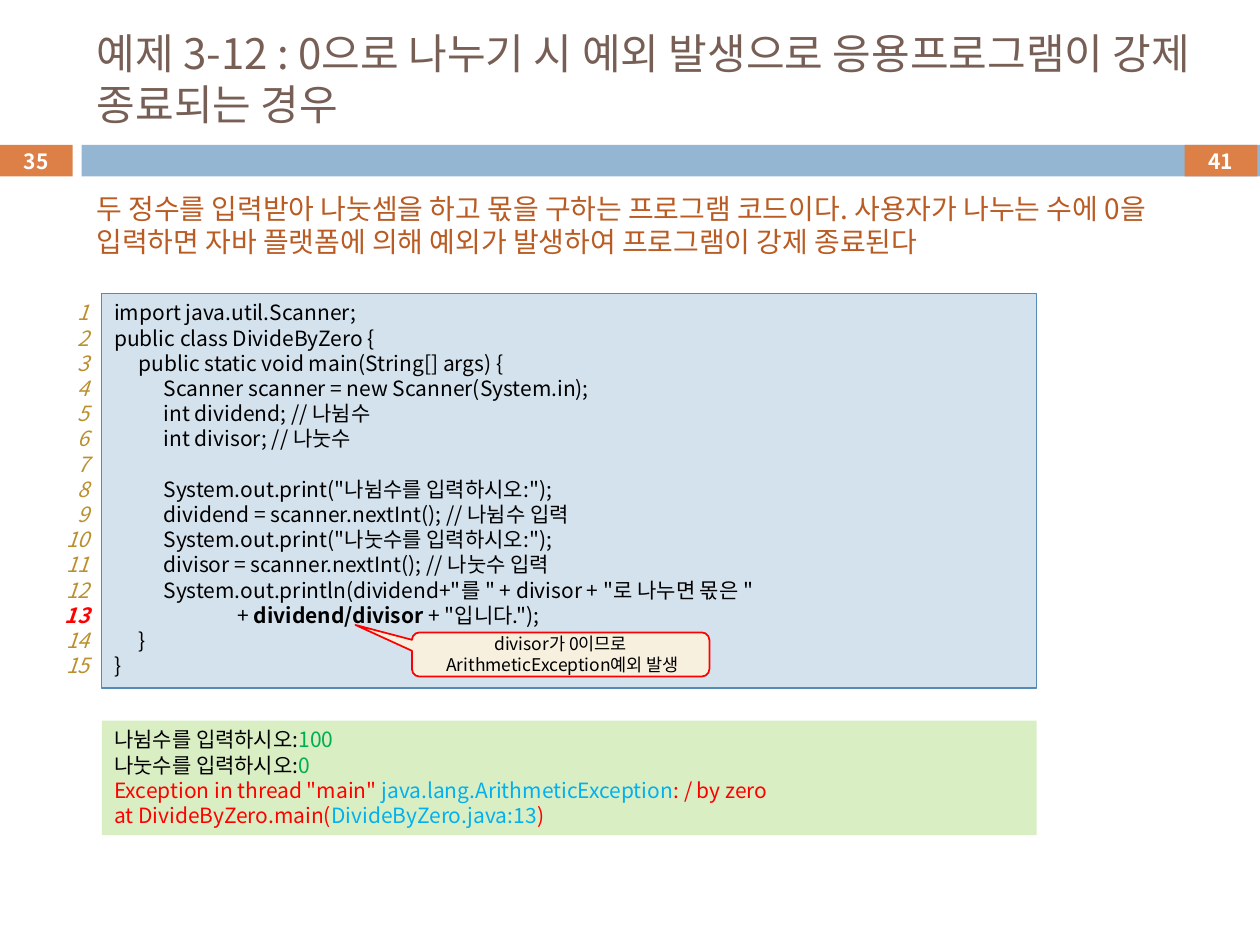
from dataclasses import dataclass, field
from lxml.etree import SubElement
from pptx import Presentation
from pptx.dml.color import RGBColor
from pptx.enum.shapes import MSO_SHAPE
from pptx.enum.text import MSO_ANCHOR, MSO_AUTO_SIZE, PP_ALIGN
from pptx.oxml.ns import qn
from pptx.util import Pt


@dataclass(frozen=True)
class Theme:
    font: str = "Noto Sans CJK KR"
    lead: float = 1.2
    tab: float = 14.1
    head: float = 24
    intro: float = 16
    code: float = 12
    note: float = 10
    brown: str = "775F55"
    rust: str = "B95B22"
    orange: str = "DD8047"
    blue: str = "94B6D2"
    pale: str = "D4E2ED"
    edge: str = "558BB8"
    mint: str = "DAEEC4"
    cream: str = "F7F0DE"
    gold: str = "BA8F2D"
    red: str = "FF0000"
    green: str = "00B050"
    sky: str = "00B0F0"
    black: str = "000000"
    white: str = "FFFFFF"


T = Theme()


@dataclass(frozen=True)
class Run:
    text: str
    color: str = T.black
    bold: bool = False
    italic: bool = False


@dataclass(frozen=True)
class Style:
    size: float = T.code
    align: PP_ALIGN = PP_ALIGN.LEFT
    anchor: MSO_ANCHOR = MSO_ANCHOR.TOP
    tabs: int = 0


@dataclass(frozen=True)
class Box:
    left: float
    top: float
    width: float
    height: float
    fill: str | None = None
    line: str | None = None
    weight: float = 0.75
    kind: MSO_SHAPE = MSO_SHAPE.RECTANGLE
    bends: tuple[float, ...] = ()
    rows: list[list[Run]] = field(default_factory=list)
    style: Style = Style()


def apply(target, values: dict) -> None:
    for name, value in values.items():
        setattr(target, name, value)


def add_tabs(para, count: int) -> None:
    stops = SubElement(para._p.get_or_add_pPr(), qn("a:tabLst"))
    for step in range(1, count + 1):
        SubElement(stops, qn("a:tab"), pos=str(Pt(T.tab * step)), algn="l")


def write(frame, rows: list[list[Run]], style: Style) -> None:
    apply(frame, {"word_wrap": True, "auto_size": MSO_AUTO_SIZE.NONE,
                  "vertical_anchor": style.anchor,
                  "margin_left": Pt(7.2), "margin_right": Pt(7.2),
                  "margin_top": Pt(3.6), "margin_bottom": Pt(3.6)})
    pitch = Pt(style.size * T.lead)
    gap = 0
    first = True
    for row in rows:
        if not row:
            gap += pitch
            continue
        para = frame.paragraphs[0] if first else frame.add_paragraph()
        first = False
        apply(para, {"alignment": style.align, "line_spacing": pitch,
                     "space_before": gap, "space_after": Pt(0)})
        gap = 0
        if style.tabs:
            add_tabs(para, style.tabs)
        for part in row:
            run = para.add_run()
            run.text = part.text
            apply(run.font, {"name": T.font, "size": Pt(style.size),
                             "bold": part.bold, "italic": part.italic})
            run.font.color.rgb = RGBColor.from_string(part.color)
            SubElement(run._r.get_or_add_rPr(), qn("a:ea"), typeface=T.font)


def draw(slide, box: Box) -> None:
    area = [Pt(n) for n in (box.left, box.top, box.width, box.height)]
    if box.fill:
        shape = slide.shapes.add_shape(box.kind, *area)
        shape.shadow.inherit = False
        shape.fill.solid()
        shape.fill.fore_color.rgb = RGBColor.from_string(box.fill)
        if box.line:
            shape.line.color.rgb = RGBColor.from_string(box.line)
            shape.line.width = Pt(box.weight)
        else:
            shape.line.fill.background()
        for spot, bend in enumerate(box.bends):
            shape.adjustments[spot] = bend
    else:
        shape = slide.shapes.add_textbox(*area)
    if box.rows:
        write(shape.text_frame, box.rows, box.style)


CODE = """import java.util.Scanner;
public class DivideByZero {
\tpublic static void main(String[] args) {
\t\tScanner scanner = new Scanner(System.in);
\t\tint dividend; // 나뉨수
\t\tint divisor; // 나눗수

\t\tSystem.out.print("나뉨수를 입력하시오:");
\t\tdividend = scanner.nextInt(); // 나뉨수 입력
\t\tSystem.out.print("나눗수를 입력하시오:");
\t\tdivisor = scanner.nextInt(); // 나눗수 입력
\t\tSystem.out.println(dividend+"를 " + divisor + "로 나누면 몫은 "
\t\t\t\t\t+ dividend/divisor + "입니다.");
\t}
}""".split("\n")
FAULT = 13
KEY = "dividend/divisor"


def split_code(line: str) -> list[Run]:
    start, key, rest = line.partition(KEY)
    parts = [Run(start), Run(key, bold=True), Run(rest)]
    return [part for part in parts if part.text]


def count_row(num: int) -> list[Run]:
    bad = num == FAULT
    return [Run(str(num), T.red if bad else T.gold, bad, True)]


def main() -> None:
    deck = Presentation()
    apply(deck, {"slide_width": Pt(720), "slide_height": Pt(540)})
    slide = deck.slides.add_slide(deck.slide_layouts[5])

    title = slide.shapes.title
    apply(title, {"left": Pt(48.2), "top": Pt(18),
                  "width": Pt(642.2), "height": Pt(53.3)})
    head = "예제 3-12 : 0으로 나누기 시 예외 발생으로 응용프로그램이 강제 종료되는 경우"
    write(title.text_frame, [[Run(head, T.brown)]],
          Style(T.head, anchor=MSO_ANCHOR.MIDDLE))

    intro = ("두 정수를 입력받아 나눗셈을 하고 몫을 구하는 프로그램 코드이다. "
             "사용자가 나누는 수에 0을 입력하면 자바 플랫폼에 의해 예외가 발생하여 "
             "프로그램이 강제 종료된다")
    output = [
        [Run("나뉨수를 입력하시오:"), Run("100", T.green)],
        [Run("나눗수를 입력하시오:"), Run("0", T.green)],
        [Run('Exception in thread "main" ', T.red),
         Run("java.lang.ArithmeticException", T.sky), Run(": / by zero", T.red)],
        [Run("at DivideByZero.main(", T.red),
         Run("DivideByZero.java:13", T.sky), Run(")", T.red)],
    ]
    note = [[Run("divisor가 0이므로")], [Run(" ArithmeticException예외 발생")]]
    mid = Style(T.note, PP_ALIGN.CENTER, MSO_ANCHOR.MIDDLE)
    badge = Style(T.code, PP_ALIGN.CENTER, MSO_ANCHOR.MIDDLE)
    count = [count_row(num) for num in range(1, len(CODE) + 1)]
    boxes = [Box(46.6, 82.8, 673.4, 18, T.blue)]
    boxes += [Box(left, 82.8, 41.5, 18, T.orange,
                  rows=[[Run(page, T.white, True)]], style=badge)
              for left, page in ((0, "35"), (677, "41"))]
    boxes += [
        Box(48.2, 105.8, 629.3, 46, rows=[[Run(intro, T.rust)]],
            style=Style(T.intro)),
        Box(58.2, 167.8, 534.2, 225.4, T.pale, T.edge,
            rows=[split_code(line) for line in CODE], style=Style(tabs=5)),
        Box(58.2, 411.8, 534.2, 65.5, T.mint, rows=output),
        Box(235.4, 361.4, 170, 25.2, T.cream, T.red, 1,
            MSO_SHAPE.ROUNDED_RECTANGULAR_CALLOUT, (-0.69, -0.67, 0.17),
            note, mid),
        Box(24.5, 167.8, 33.8, 225.4, rows=count,
            style=Style(align=PP_ALIGN.RIGHT)),
    ]
    for box in boxes:
        draw(slide, box)
    deck.save("out.pptx")


if __name__ == "__main__":
    main()
